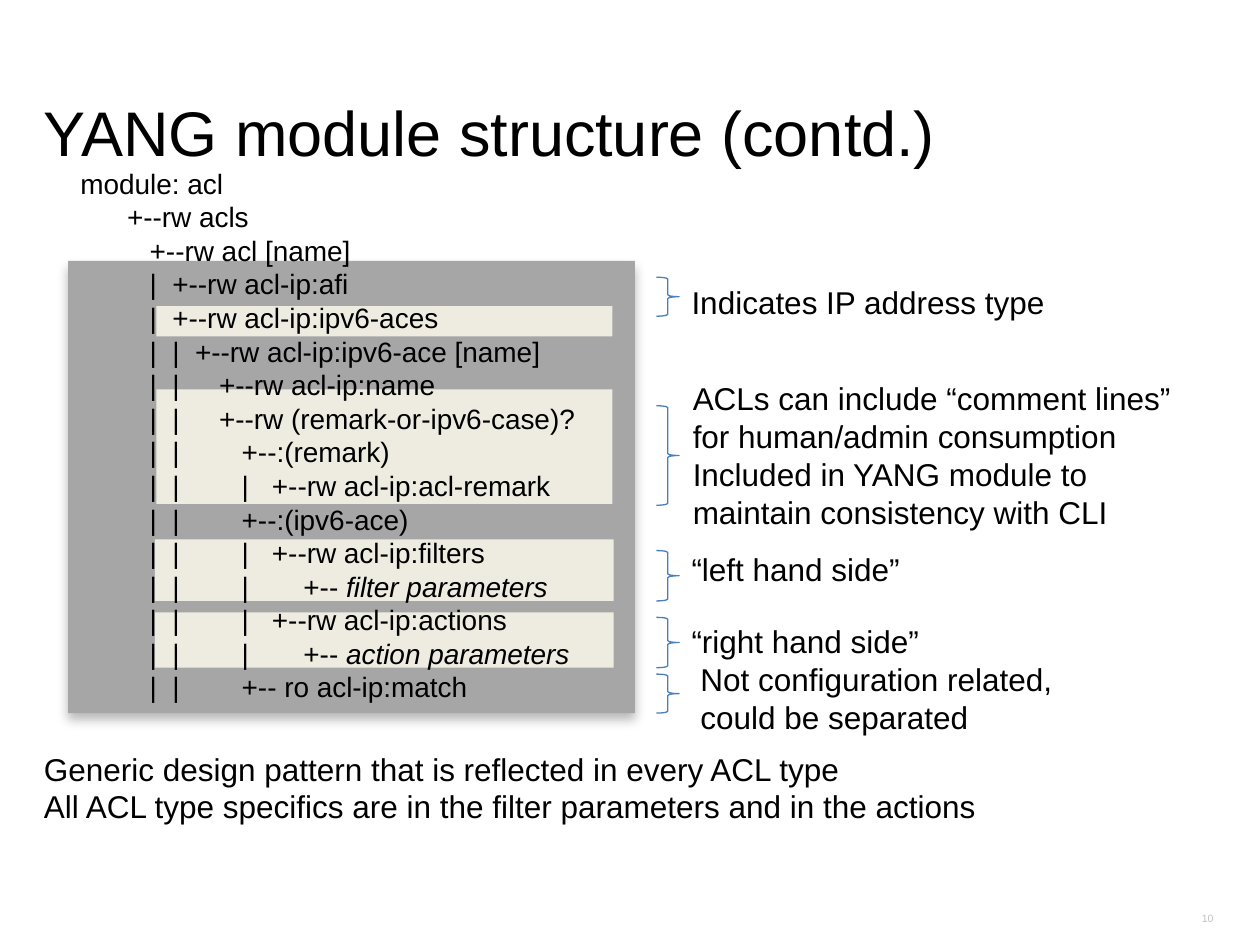
from typing import NamedTuple

from lxml import etree
from pptx import Presentation
from pptx.dml.color import RGBColor
from pptx.enum.shapes import MSO_SHAPE
from pptx.enum.text import MSO_ANCHOR, PP_ALIGN
from pptx.oxml.ns import qn
from pptx.util import Inches, Pt

RECT, BRACE = MSO_SHAPE.RECTANGLE, MSO_SHAPE.RIGHT_BRACE
TOP, BOTTOM = MSO_ANCHOR.TOP, MSO_ANCHOR.BOTTOM
LEFT, RIGHT = PP_ALIGN.LEFT, PP_ALIGN.RIGHT

BLACK = RGBColor(0x00, 0x00, 0x00)
GRAY = RGBColor(0xA6, 0xA6, 0xA6)
SILVER = RGBColor(0xC0, 0xC0, 0xC0)
CREAM = RGBColor(0xEE, 0xEC, 0xE1)
BLUE = RGBColor(0x4B, 0x7E, 0xBC)

# Tree columns, in inches from the text edge
STOPS = (0, 0.37, 0.55, 0.73, 0.91, 1.1, 1.28, 1.52, 1.77)


class Box(NamedTuple):
    x: float
    y: float
    w: float
    h: float


class Note(NamedTuple):
    text: str
    box: Box


class Row(NamedTuple):
    cols: tuple[int, ...]  # bars stand in all columns but the last
    text: str
    slant: str = ""


PANEL = Box(0.54, 2.07, 4.5, 3.59)
BANDS = (
    Box(1.24, 2.43, 3.62, 0.24),
    Box(1.24, 3.09, 3.62, 0.91),
    Box(1.23, 4.28, 3.64, 0.49),
    Box(1.23, 4.86, 3.64, 0.44),
)
BRACES = ((2.2, 0.31), (3.22, 0.79), (4.37, 0.4), (4.9, 0.4), (5.35, 0.31))
NOTES = (
    Note("Indicates IP address type", Box(5.39, 2.2, 3.03, 0.4)),
    Note("ACLs can include “comment lines”\vfor human/admin consumption\v"
         "Included in YANG module to\vmaintain consistency with CLI",
         Box(5.4, 2.96, 4.03, 1.31)),
    Note("“left hand side”", Box(5.39, 4.32, 1.87, 0.4)),
    Note("“right hand side”", Box(5.39, 4.89, 2.03, 0.4)),
    Note("Not configuration related,\vcould be separated",
         Box(5.46, 5.19, 3.09, 0.71)),
    Note("Generic design pattern that is reflected in every ACL type\n"
         "All ACL type specifics are in the filter parameters and in the actions",
         Box(0.25, 5.9, 7.67, 0.71)),
)
TREE = (
    Row((0,), "module: acl"),
    Row((1,), "+--rw acls"),
    Row((2,), "+--rw acl [name]"),
    Row((2, 3), "+--rw acl-ip:afi"),
    Row((2, 3), "+--rw acl-ip:ipv6-aces"),
    Row((2, 3, 4), "+--rw acl-ip:ipv6-ace [name]"),
    Row((2, 3, 5), "+--rw acl-ip:name"),
    Row((2, 3, 5), "+--rw (remark-or-ipv6-case)?"),
    Row((2, 3, 6), "+--:(remark)"),
    Row((2, 3, 6, 7), "+--rw acl-ip:acl-remark"),
    Row((2, 3, 6), "+--:(ipv6-ace)"),
    Row((2, 3, 6, 7), "+--rw acl-ip:filters"),
    Row((2, 3, 6, 8), "+-- ", "filter parameters"),
    Row((2, 3, 6, 7), "+--rw acl-ip:actions"),
    Row((2, 3, 6, 8), "+-- ", "action parameters"),
    Row((2, 3, 6), "+-- ro acl-ip:match"),
)


def place(box: Box) -> list[int]:
    return [Inches(v) for v in box]


def style(para, size: float, color: RGBColor = BLACK) -> None:
    font = para.font
    font.name, font.size = "Arial", Pt(size)
    font.color.rgb = color


def add_rect(slide, box: Box, color: RGBColor):
    rect = slide.shapes.add_shape(RECT, *place(box))
    rect.shadow.inherit = False
    rect.fill.solid()
    rect.fill.fore_color.rgb = color
    rect.line.fill.background()
    return rect


def add_shade(shape) -> None:
    effects = shape._element.spPr.find(qn("a:effectLst"))
    shade = etree.SubElement(effects, qn("a:outerShdw"), blurRad=str(Pt(6)),
                             dist=str(Pt(4)), dir="5400000", rotWithShape="0")
    tint = etree.SubElement(shade, qn("a:srgbClr"), val="000000")
    etree.SubElement(tint, qn("a:alpha"), val="27000")


def add_brace(slide, top: float, high: float) -> None:
    brace = slide.shapes.add_shape(BRACE, *place(Box(5.21, top, 0.18, high)))
    brace.shadow.inherit = False
    brace.fill.background()
    brace.line.color.rgb = BLUE
    brace.line.width = Pt(0.75)


def add_text(slide, text: str, box: Box, size: float, color: RGBColor = BLACK,
             anchor=TOP, align=LEFT, wrap: bool = False, pitch: float = 1.0) -> None:
    frame = slide.shapes.add_textbox(*place(box)).text_frame
    frame.word_wrap = wrap
    frame.vertical_anchor = anchor
    frame.text = text
    for para in frame.paragraphs:
        para.alignment = align
        para.line_spacing = pitch
        style(para, size, color)


def set_tabs(para, cols: tuple[int, ...]) -> None:
    tabs = etree.SubElement(para._p.get_or_add_pPr(), qn("a:tabLst"))
    for col in cols:
        etree.SubElement(tabs, qn("a:tab"), pos=str(Inches(STOPS[col])), algn="l")


def add_tree(slide, box: Box) -> None:
    frame = slide.shapes.add_textbox(*place(box)).text_frame
    frame.word_wrap = True
    for i, row in enumerate(TREE):
        para = frame.add_paragraph() if i else frame.paragraphs[0]
        lead = ""
        if row.cols[0]:
            set_tabs(para, row.cols)
            lead = "\t" + "|\t" * (len(row.cols) - 1)
        style(para, 16)
        para.add_run().text = lead + row.text
        if row.slant:
            run = para.add_run()
            run.text = row.slant
            run.font.italic = True


def main() -> None:
    deck = Presentation()
    deck.slide_width, deck.slide_height = Inches(10), Inches(7.5)
    slide = deck.slides.add_slide(deck.slide_layouts[6])

    # Panel and highlighted rows
    add_shade(add_rect(slide, PANEL, GRAY))
    for band in BANDS:
        add_rect(slide, band, CREAM)

    # Title and page number
    add_text(slide, "YANG module structure (contd.)", Box(0.25, 0.47, 9.39, 0.92),
             36, anchor=BOTTOM, wrap=True, pitch=0.8)
    add_text(slide, "10", Box(9.23, 7.2, 0.5, 0.19), 6, SILVER, BOTTOM, RIGHT,
             wrap=True)

    # Braces and remarks
    for top, high in BRACES:
        add_brace(slide, top, high)
    for note in NOTES:
        add_text(slide, note.text, note.box, 18)

    # Module tree
    add_tree(slide, Box(0.54, 1.27, 4.33, 5.51))
    deck.save("out.pptx")


if __name__ == "__main__":
    main()
